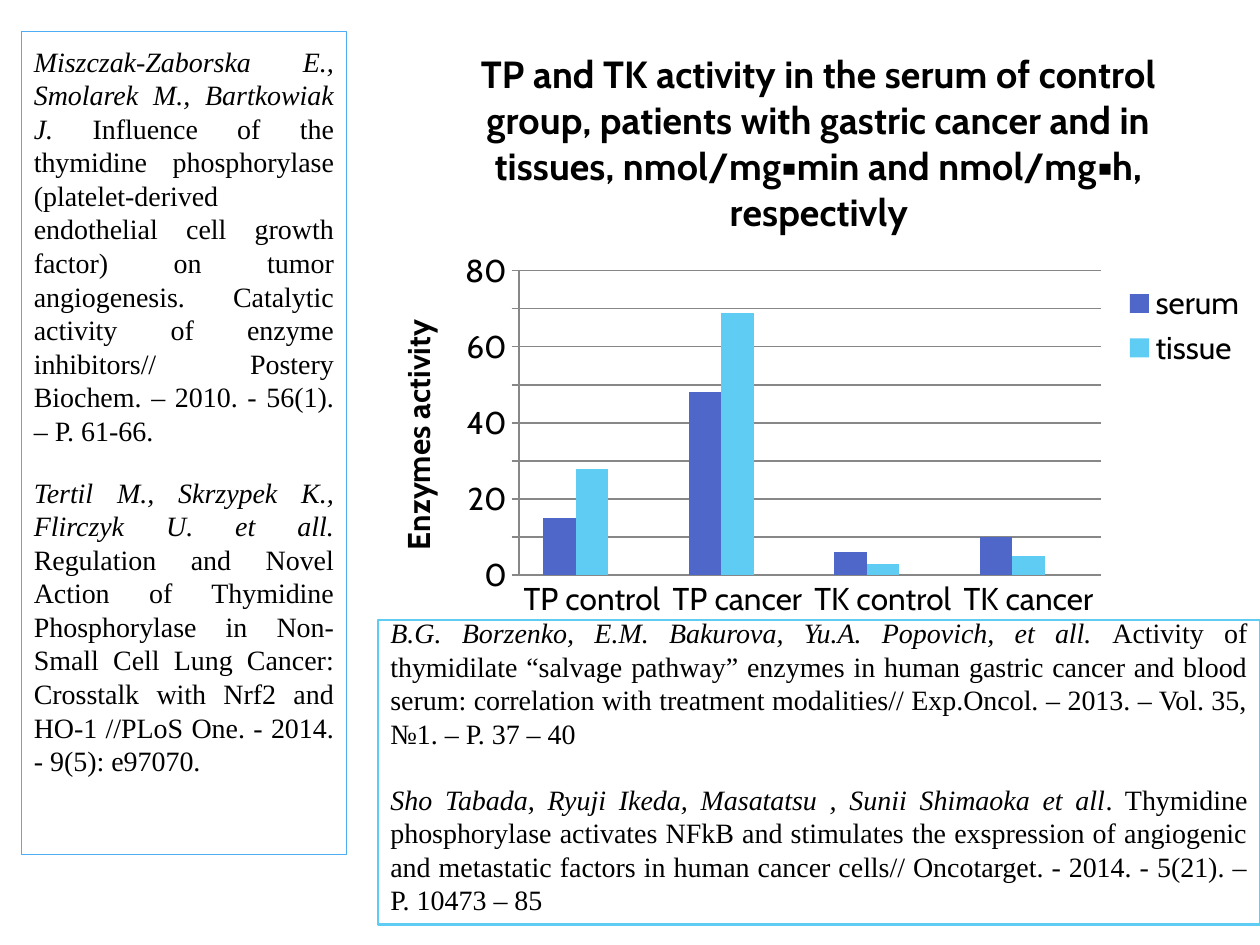
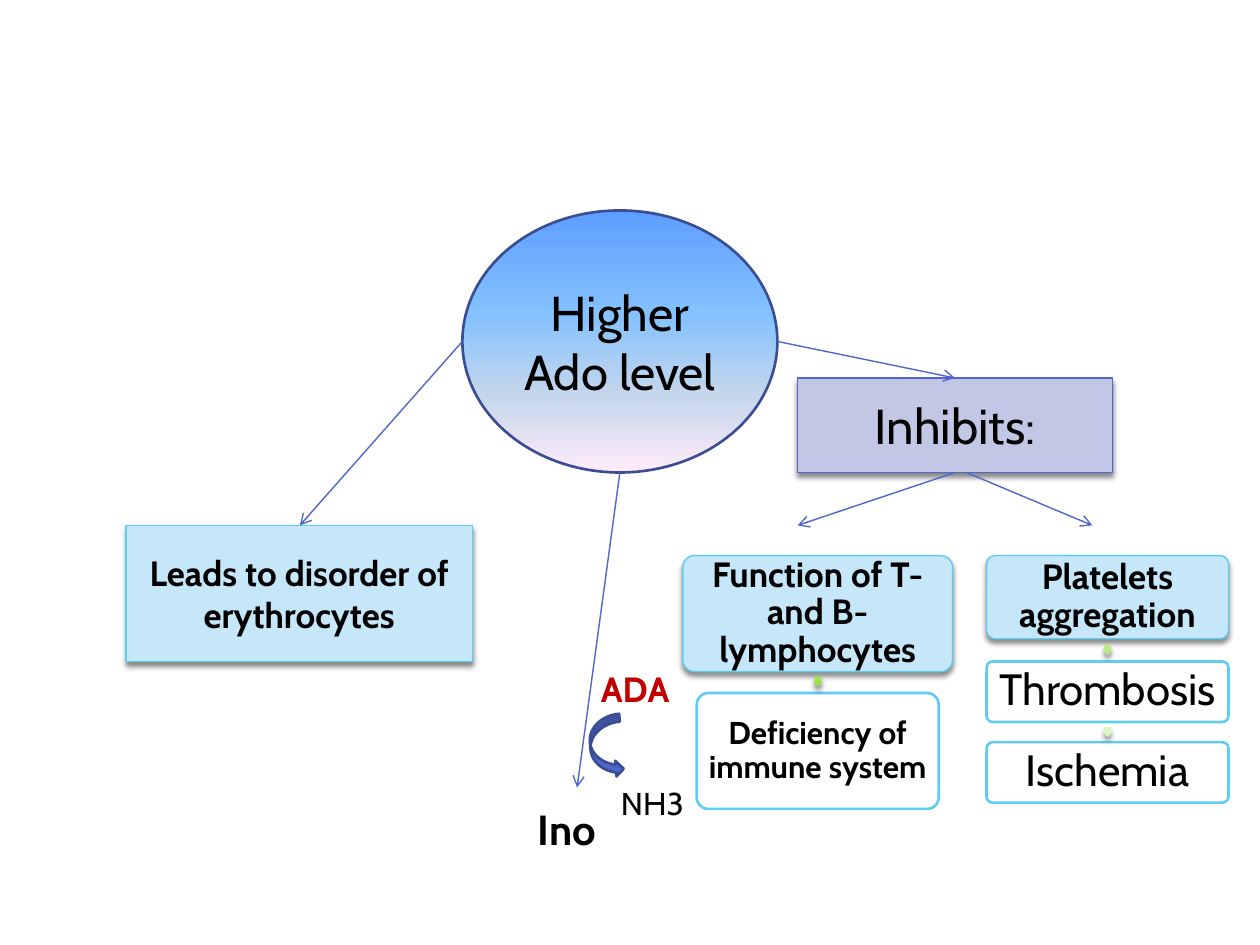
from lxml.etree import SubElement
from pptx import Presentation
from pptx.chart.data import CategoryChartData
from pptx.dml.color import RGBColor
from pptx.enum.chart import XL_CHART_TYPE as ChartType, XL_LEGEND_POSITION as LegendPosition
from pptx.enum.chart import XL_TICK_MARK as TickMark
from pptx.enum.shapes import MSO_CONNECTOR as Connector, MSO_SHAPE as Shape
from pptx.enum.text import MSO_ANCHOR as Anchor, PP_ALIGN as Align
from pptx.oxml import parse_xml
from pptx.oxml.ns import nsdecls, qn
from pptx.util import Inches, Pt

BLACK, WHITE = "000000", "FFFFFF"
BLUE, DARK_BLUE, SKY, PALE_SKY, LAVENDER = "4E67C8", "3A4C94", "5ECCF3", "C5E7F9", "C2C7E6"
LIME, RED, GRID = "A7EA52", "C00000", "878787"
THIN, THICK = 0.79, 1.5


def color(value):
    return RGBColor.from_string(value)


class Painter:
    """Holds the deck's style and draws elements on the current slide."""

    font = "Cabin"
    citation_font = "Times New Roman"

    def __init__(self):
        self.deck = Presentation()
        self.deck.slide_width, self.deck.slide_height = Inches(10), Inches(7.5)
        self.page = None

    def new_page(self):
        self.page = self.deck.slides.add_slide(self.deck.slide_layouts[6])

    def style(self, font, size, bold=False, ink=BLACK, name=None):
        font.name, font.size, font.bold = name or self.font, Pt(size), bold
        font.color.rgb = color(ink)

    def shape(self, kind, place, fill=None, line=None, width=THIN, shadow=False):
        shape = self.page.shapes.add_shape(kind, *map(Inches, place))
        shape.shadow.inherit = False
        if fill:
            shape.fill.solid()
            shape.fill.fore_color.rgb = color(fill)
        else:
            shape.fill.background()
        if line:
            shape.line.color.rgb = color(line)
            shape.line.width = Pt(width)
        else:
            shape.line.fill.background()
        if shadow:
            effects = shape.element.spPr.find(qn("a:effectLst"))
            effects.append(parse_xml(
                f'<a:outerShdw {nsdecls("a")} blurRad="{Pt(3)}" dist="{Pt(2.4)}" dir="5400000" '
                'rotWithShape="0"><a:srgbClr val="000000"><a:alpha val="45000"/></a:srgbClr>'
                '</a:outerShdw>'))
        return shape

    def gradient(self, shape, stops):
        shape.fill.gradient()
        shape.fill.gradient_angle = 270
        stop_list = shape.element.spPr.find(qn("a:gradFill")).find(qn("a:gsLst"))
        for old in list(stop_list):
            stop_list.remove(old)
        for position, value in stops:
            stop = SubElement(stop_list, qn("a:gs"), pos=str(position * 1000))
            SubElement(stop, qn("a:srgbClr"), val=value)

    def caption(self, box, text, size, bold=False, ink=BLACK, align=Align.CENTER):
        box.text_frame.word_wrap = True
        para = box.text_frame.paragraphs[0]
        para.text, para.alignment = text, align
        self.style(para.font, size, bold, ink)
        return para

    def label(self, place, text, size, bold=False, ink=BLACK):
        box = self.page.shapes.add_textbox(*map(Inches, place))
        self.caption(box, text, size, bold, ink, Align.LEFT)

    def card(self, place, text, size, bold=False, filled=False):
        fill, width = (PALE_SKY, THIN) if filled else (WHITE, THICK)
        card = self.shape(Shape.ROUNDED_RECTANGLE, place, fill, SKY, width, filled)
        card.adjustments[0] = 0.1
        frame = card.text_frame
        frame.margin_left = frame.margin_right = Inches(0.05)
        frame.margin_top = frame.margin_bottom = Inches(0.05)
        self.caption(card, text, size, bold).line_spacing = 0.9

    def step(self, left, top, fill):
        arrow = self.shape(Shape.RIGHT_ARROW, (left, top, 0.08, 0.08), fill, shadow=True)
        arrow.rotation = 90
        arrow.adjustments[0] = 0.67

    def arrow(self, start, end):
        connector = self.page.shapes.add_connector(Connector.STRAIGHT, *map(Inches, start + end))
        connector.line.color.rgb = color(BLUE)
        connector.line.width = Pt(THIN)
        properties = connector.element.spPr
        SubElement(properties.find(qn("a:ln")), qn("a:tailEnd"), type="arrow")
        SubElement(properties, qn("a:effectLst"))

    def citations(self, box, anchor, margins, gap, entries):
        frame = box.text_frame
        frame.word_wrap, frame.vertical_anchor = True, anchor
        frame.margin_top, frame.margin_bottom = map(Inches, margins)
        for index, (authors, work) in enumerate(entries):
            para = frame.add_paragraph() if index else frame.paragraphs[0]
            para.alignment = Align.JUSTIFY
            para.space_before = Pt(gap if index else 0)
            self.style(para.font, 16, name=self.citation_font)
            for text, italic in ((authors, True), (work, False)):
                span = para.add_run()
                span.text, span.font.italic = text, italic

    def column_chart(self, place, title, axis_title, categories, series, layout):
        data = CategoryChartData()
        data.categories = categories
        for name, values, _ in series:
            data.add_series(name, values)
        chart = self.page.shapes.add_chart(
            ChartType.COLUMN_CLUSTERED, *map(Inches, place), data).chart
        self.style(chart.font, 18)
        plot = chart.plots[0]
        plot.gap_width, plot.overlap, plot.vary_by_categories = 150, 0, False
        for bars, (_, _, fill) in zip(plot.series, series):
            bars.format.fill.solid()
            bars.format.fill.fore_color.rgb = color(fill)
        across, up = chart.category_axis, chart.value_axis
        across.major_tick_mark = TickMark.NONE
        up.major_tick_mark = TickMark.OUTSIDE
        up.minimum_scale, up.maximum_scale, up.major_unit = 0, 80, 10
        up.has_major_gridlines = True
        for ruled in (across, up, up.major_gridlines):
            ruled.format.line.color.rgb = color(GRID)
            ruled.format.line.width = Pt(0.75)
        chart.has_title = True
        for holder, text, size in ((chart.chart_title, title, 21.6),
                                   (up.axis_title, axis_title, 18)):
            holder.text_frame.text = text
            self.style(holder.text_frame.paragraphs[0].font, size, True)
        self.legend(chart, hidden=2)
        sizes = "".join(f'<c:{key} val="{value}"/>' for key, value in zip("xywh", layout))
        area = chart.element.find(".//" + qn("c:plotArea"))
        for old in area.findall(qn("c:layout")):
            area.remove(old)
        area.insert(0, parse_xml(
            f'<c:layout {nsdecls("c")}><c:manualLayout><c:layoutTarget val="inner"/>'
            f'<c:xMode val="edge"/><c:yMode val="edge"/>{sizes}</c:manualLayout></c:layout>'))

    def legend(self, chart, hidden):
        chart.has_legend = True
        chart.legend.position = LegendPosition.RIGHT
        chart.legend.include_in_layout = False
        self.style(chart.legend.font, 18)
        chart.element.find(".//" + qn("c:legendPos")).addnext(parse_xml(
            f'<c:legendEntry {nsdecls("c")}><c:idx val="{hidden}"/><c:delete val="1"/>'
            '</c:legendEntry>'))


def activity_page(painter):
    painter.new_page()
    painter.column_chart(
        (3, 0.17, 7, 4.83),
        "TP and TK activity in the serum of control group, patients with gastric cancer "
        "and in tissues, nmol/mg▪min and nmol/mg▪h, respectivly",
        "Enzymes activity",
        ("TP control", "TP cancer", "TK control", "TK cancer"),
        (("serum", (15, 48, 6, 10), BLUE),
         ("tissue", (28, 69, 3, 5), SKY),
         ("Series 3", (None,) * 4, LIME)),
        (0.16, 0.41, 0.66, 0.5))
    below_chart = painter.shape(Shape.RECTANGLE, (3, 4.92, 7, 2.42), WHITE, SKY, THICK)
    painter.citations(below_chart, Anchor.MIDDLE, (0, 0.1), 18.4, (
        ("B.G. Borzenko, E.M. Bakurova, Yu.A. Popovich, et all. ",
         "Activity of thymidilate “salvage pathway” enzymes in human gastric cancer and blood "
         "serum: correlation with treatment modalities// Exp.Oncol. – 2013. – Vol. 35, №1. "
         "– Р. 37 – 40"),
        ("Sho Tabada, Ryuji Ikeda, Masatatsu , Sunii Shimaoka et all",
         ". Thymidine phosphorylase activates NFkB and stimulates the exspression of "
         "angiogenic and metastatic factors in human cancer cells// Oncotarget. - 2014. "
         "- 5(21). – P. 10473 – 85")))
    sidebar = painter.shape(Shape.RECTANGLE, (0.17, 0.25, 2.58, 6.53), None, "4FADF3", 0.75)
    painter.citations(sidebar, Anchor.TOP, (0.1, 0.05), 16, (
        ("Miszczak-Zaborska E., Smolarek M., Bartkowiak J. ",
         "Influence of the thymidine phosphorylase (platelet-derived endothelial cell growth "
         "factor) on tumor angiogenesis. Catalytic activity of enzyme inhibitors// Postery "
         "Biochem. – 2010. - 56(1). – P. 61-66."),
        ("Tertil M., Skrzypek K., Flirczyk U. et all. ",
         "Regulation and Novel Action of Thymidine Phosphorylase in Non-Small Cell Lung "
         "Cancer: Crosstalk with Nrf2 and HO-1 //PLoS One. - 2014. - 9(5): e97070.")))


def adenosine_page(painter):
    painter.new_page()
    inhibits = painter.shape(Shape.RECTANGLE, (6.33, 3, 2.5, 0.75), LAVENDER, BLUE, shadow=True)
    painter.caption(inhibits, "Inhibits:", 28)
    level = painter.shape(Shape.OVAL, (3.67, 1.67, 2.5, 2.08), WHITE, DARK_BLUE, THICK)
    painter.gradient(level, ((0, "5E9EFF"), (40, "85C2FF"), (70, "C4D6EB"), (100, "FFEBFA")))
    painter.caption(level, "Higher Ado level", 28)
    disorder = painter.shape(Shape.RECTANGLE, (1, 4.17, 2.75, 1.08), PALE_SKY, SKY, shadow=True)
    painter.caption(disorder, "Leads to disorder of erythrocytes", 20, True)
    for start, end in (((7.58, 3.75), (6.33, 4.17)),
                       ((7.67, 3.75), (8.67, 4.17)),
                       ((4.92, 3.75), (4.58, 6.25)),
                       ((6.17, 2.71), (7.58, 3)),
                       ((3.67, 2.71), (2.38, 4.17))):
        painter.arrow(start, end)

    turn = painter.shape(Shape.CURVED_UP_ARROW, (4.56, 5.8, 0.5, 0.25), BLUE, DARK_BLUE, THICK)
    turn.rotation = 85.2
    painter.label((4.83, 6.17, 0.92, 0.4), "NH3", 18)
    painter.label((4.67, 5.25, 0.92, 0.44), "ADA", 20, True, RED)
    painter.label((4.17, 6.33, 1, 0.5), "Ino", 24, True)

    painter.card((5.42, 4.41, 2.14, 0.92), "Function of T- and B-lymphocytes", 20, True, True)
    painter.card((5.53, 5.5, 1.92, 0.92), "Deficiency of immune system", 18, True)
    painter.card((7.83, 4.41, 1.92, 0.66), "Platelets aggregation", 20, True, True)
    painter.card((7.83, 5.25, 1.92, 0.48), "Thrombosis", 25)
    painter.card((7.83, 5.89, 1.92, 0.48), "Ischemia", 25)
    for left, top, fill in ((6.45, 5.37, "A0E04E"), (8.75, 5.12, "BAEA88"),
                            (8.75, 5.77, "D9F5C3")):
        painter.step(left, top, fill)


def main():
    painter = Painter()
    activity_page(painter)
    adenosine_page(painter)
    painter.deck.save("out.pptx")


if __name__ == "__main__":
    main()
